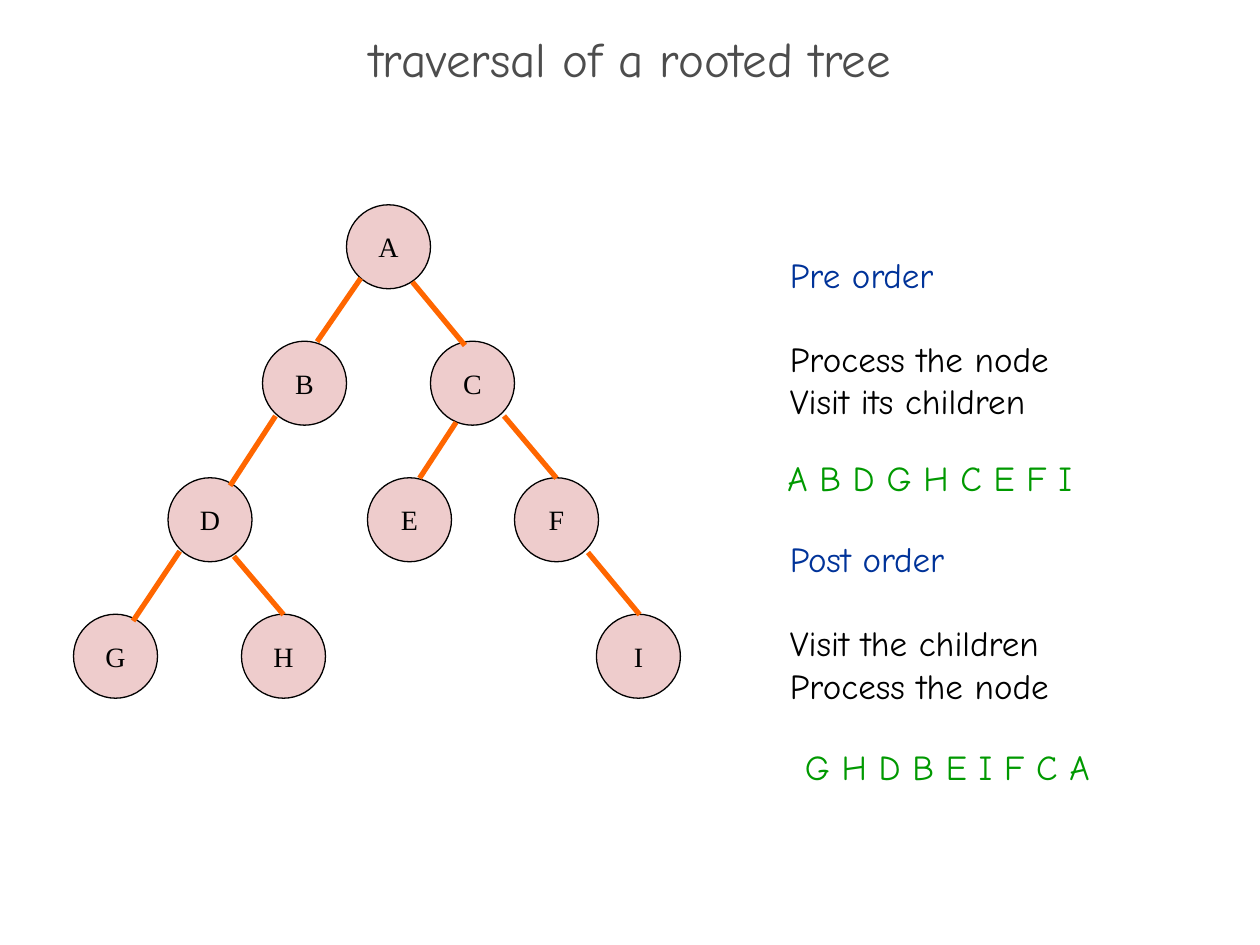
from lxml.etree import SubElement
from pptx import Presentation
from pptx.dml.color import RGBColor
from pptx.enum.shapes import MSO_CONNECTOR, MSO_SHAPE
from pptx.enum.text import MSO_ANCHOR, PP_ALIGN
from pptx.oxml.ns import qn
from pptx.util import Inches, Pt

# Content
TITLE = "traversal of a rooted tree"
NODES = {  # label: (column, level), in the tree grid
    "A": (33, 0), "B": (25, 1), "D": (16, 2), "G": (7, 3), "C": (41, 1),
    "E": (35, 2), "H": (23, 3), "F": (49, 2), "I": (56.8, 3),
}
EDGES = [  # parent, child, offset from parent centre, offset from child centre
    ("A", "B", (-0.22, 0.25), (0.10, -0.33)),
    ("B", "D", (-0.23, 0.26), (0.16, -0.27)),
    ("D", "G", (-0.24, 0.25), (0.14, -0.28)),
    ("A", "C", (0.19, 0.28), (-0.06, -0.30)),
    ("C", "F", (0.25, 0.26), (0, -0.33)),
    ("F", "I", (0.25, 0.26), (0.01, -0.33)),
    ("D", "H", (0.19, 0.29), (0, -0.33)),
    ("C", "E", (-0.13, 0.31), (0.08, -0.33)),
]
ORDERS = [  # heading, steps, sequence; each text box as (left, top, width, height)
    ("Pre order", ["Process the node", "Visit its children"], (6.17, 1.96, 2.49, 1.72),
     "A B D G H C E F I", (6.15, 3.57, 2.53, 0.44)),
    ("Post order", ["Visit the children", "Process the node"], (6.17, 4.22, 2.49, 1.45),
     "G H D B E I F C A", (6.29, 5.87, 2.53, 0.44)),
]
COLORS = {
    "title": "4D4D4D", "node": "EECCCC", "ink": "000000", "edge": "FF6600",
    "heading": "003399", "sequence": "009900",
}
TEXT_FONT, NODE_FONT = "Comic Neue", "Times New Roman"

# Tree grid: twelve columns to the inch
COLUMN = 1 / 12
NODE_SIZE = 8 * COLUMN
LEVEL_STEP = 13 * COLUMN
TREE_TOP = 19.5 * COLUMN


def color(name):
    return RGBColor.from_string(COLORS[name])


def style(paragraph, font_name, size, color_name):
    paragraph.font.name = font_name
    paragraph.font.size = Pt(size)
    paragraph.font.color.rgb = color(color_name)


def add_text(slide, box, lines):
    """Add a text box holding (text, size, color) lines; return its frame."""
    frame = slide.shapes.add_textbox(*map(Inches, box)).text_frame
    frame.word_wrap = True
    for index, (text, size, color_name) in enumerate(lines):
        paragraph = frame.add_paragraph() if index else frame.paragraphs[0]
        paragraph.text = text
        style(paragraph, TEXT_FONT, size, color_name)
    return frame


def node_corner(label):
    column, level = NODES[label]
    return column * COLUMN, TREE_TOP + level * LEVEL_STEP


def near_centre(label, offset):
    return [Inches(corner + NODE_SIZE / 2 + shift)
            for corner, shift in zip(node_corner(label), offset)]


def add_node(slide, label):
    left, top = node_corner(label)
    shape = slide.shapes.add_shape(
        MSO_SHAPE.OVAL, Inches(left), Inches(top), Inches(NODE_SIZE), Inches(NODE_SIZE))
    shape.shadow.inherit = False
    shape.fill.solid()
    shape.fill.fore_color.rgb = color("node")
    shape.line.color.rgb = color("ink")
    shape.line.width = Pt(0.75)
    frame = shape.text_frame
    frame.word_wrap = False
    frame.vertical_anchor = MSO_ANCHOR.MIDDLE
    paragraph = frame.paragraphs[0]
    paragraph.text = label
    paragraph.alignment = PP_ALIGN.CENTER
    style(paragraph, NODE_FONT, 16, "ink")


def add_edge(slide, parent, child, start, end):
    edge = slide.shapes.add_connector(
        MSO_CONNECTOR.STRAIGHT, *near_centre(parent, start), *near_centre(child, end))
    edge.line.color.rgb = color("edge")
    edge.line.width = Pt(3)
    SubElement(edge._element.spPr, qn("a:effectLst"))


def main():
    presentation = Presentation()
    presentation.slide_width, presentation.slide_height = Inches(10), Inches(7.5)
    slide = presentation.slides.add_slide(presentation.slide_layouts[6])

    # Title
    frame = add_text(slide, (0, 0.27, 10, 0.5), [(TITLE, 28, "title")])
    frame.vertical_anchor = MSO_ANCHOR.MIDDLE
    frame.paragraphs[0].alignment = PP_ALIGN.CENTER
    frame.paragraphs[0].line_spacing = 0.7

    # Tree
    for label in NODES:
        add_node(slide, label)
    for edge in EDGES:
        add_edge(slide, *edge)

    # Traversal orders
    for heading, steps, steps_box, sequence, sequence_box in ORDERS:
        lines = [(heading, 20, "heading")] + [(step, 20, "ink") for step in steps]
        frame = add_text(slide, steps_box, lines)
        frame.paragraphs[0].space_after = Pt(24)
        add_text(slide, sequence_box, [(sequence, 20, "sequence")])

    presentation.save("out.pptx")


if __name__ == "__main__":
    main()
